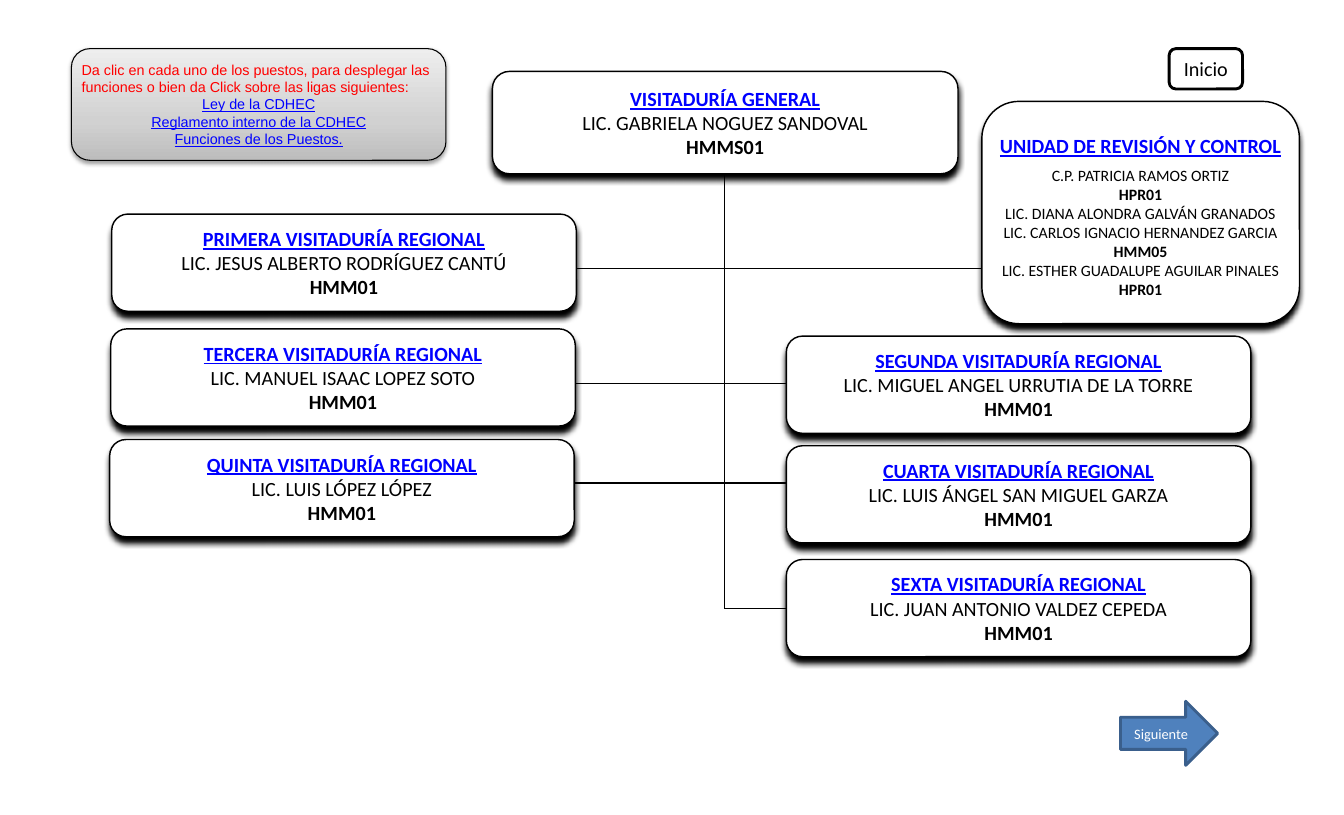
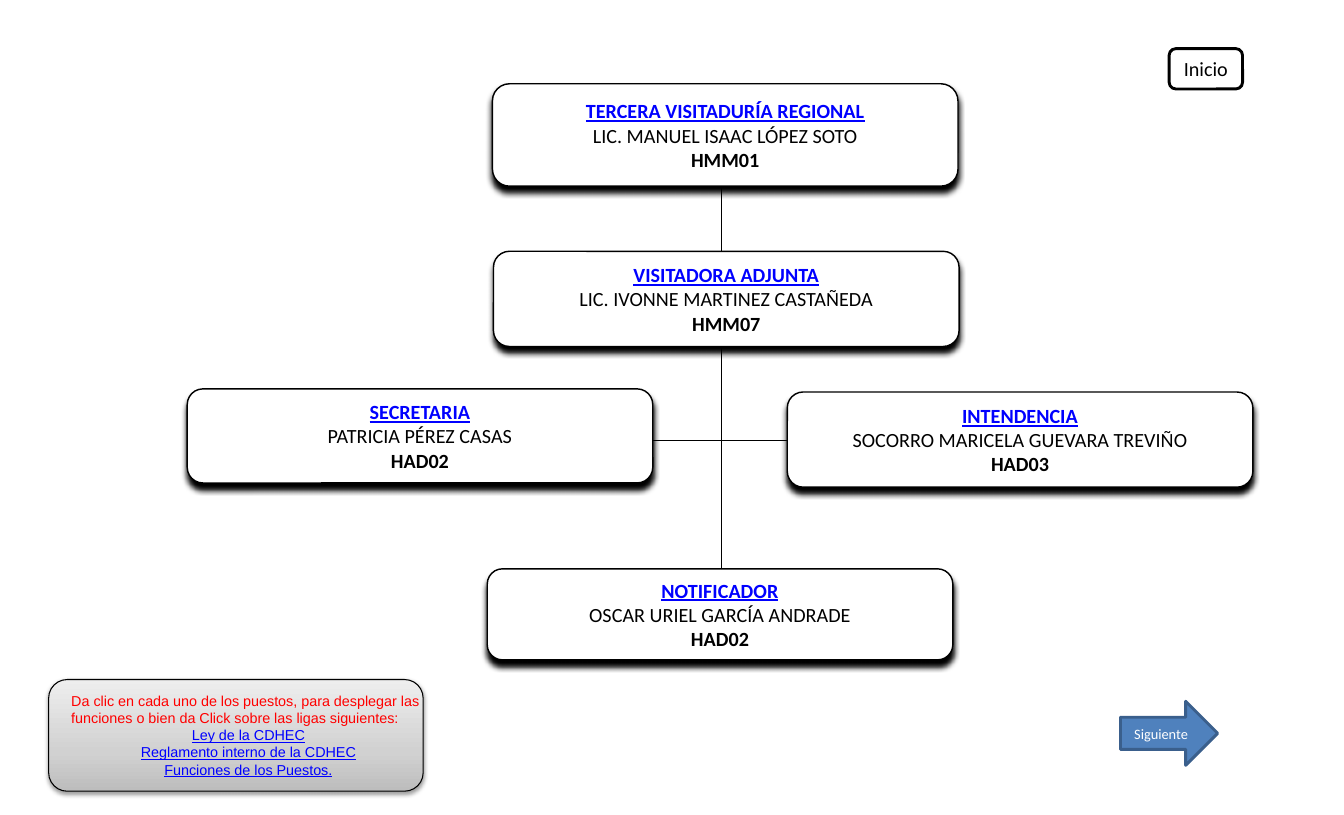
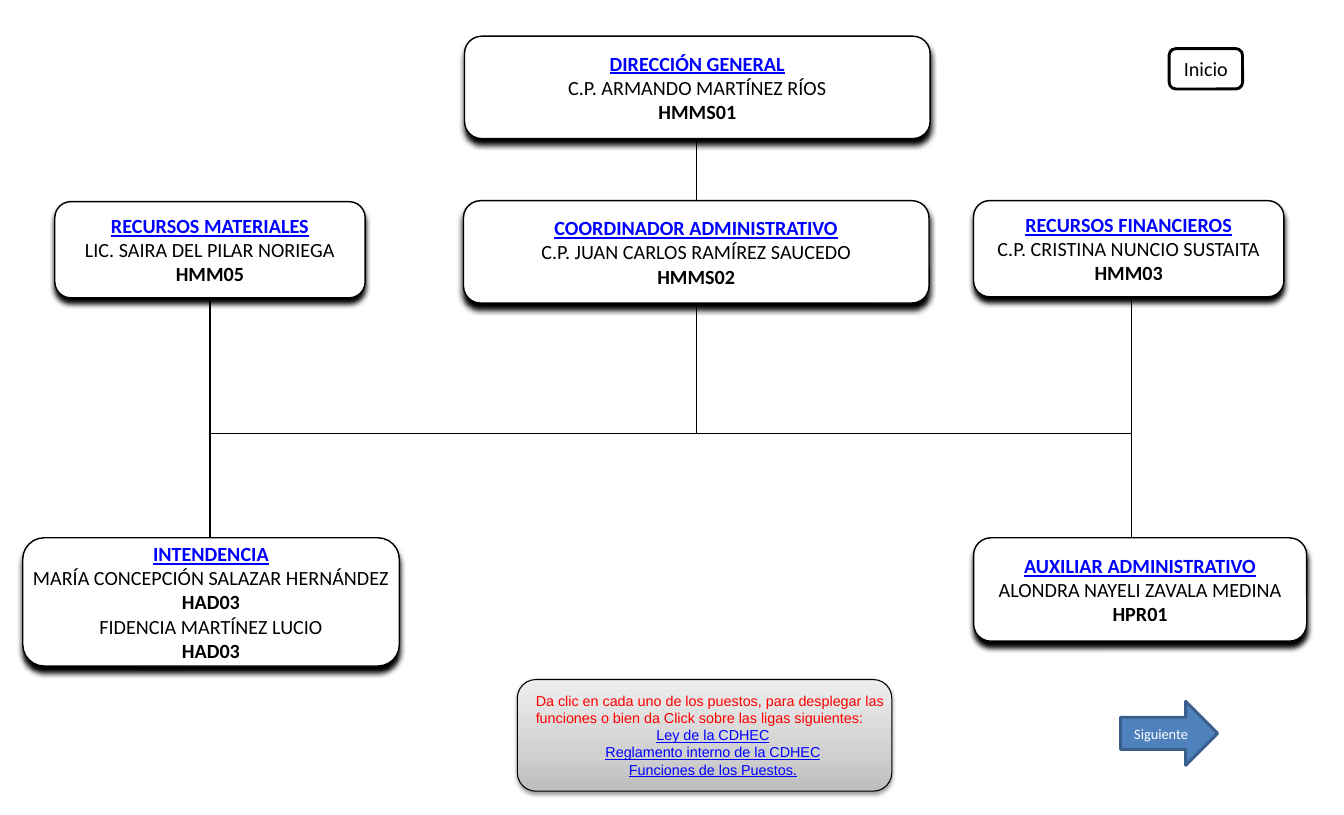
from pptx import Presentation
from pptx.dml.color import RGBColor
from pptx.enum.shapes import MSO_CONNECTOR, MSO_SHAPE as Shape
from pptx.enum.text import MSO_ANCHOR, MSO_AUTO_SIZE, PP_ALIGN
from pptx.oxml.ns import qn
from pptx.util import Pt
from lxml.etree import SubElement

PX = 9144  # EMU per px, 100 px to the inch
WIDTH, HEIGHT = 1299, 788
BLACK, WHITE, LINK, NOTICE = "000000", "FFFFFF", "0000FF", "FF0000"
ARROW, ARROW_EDGE = "4F81BD", "3A5F8C"
PANEL_STOPS = ((0, "BDBDBD"), (35, "D1D1D1"), (100, "EEEEEE"))
INSTRUCTION = ("Da clic en cada uno de los puestos, para desplegar las "
               "funciones o bien da Click sobre las ligas siguientes:")
LINKS = ("Ley de la CDHEC", "Reglamento interno de la CDHEC",
         "Funciones de los Puestos.")


def px(*lengths):
    return [round(length * PX) for length in lengths]


def colour(value):
    return RGBColor.from_string(value)


class OrgChart:
    """Style of the organisation charts and the slide being drawn."""

    def __init__(self):
        self.deck = Presentation()
        self.deck.slide_width, self.deck.slide_height = px(WIDTH, HEIGHT)
        self.shapes = None

    def new_slide(self):
        self.shapes = self.deck.slides.add_slide(self.deck.slide_layouts[6]).shapes

    def box(self, preset, bounds, fill, edge, weight):
        box = self.shapes.add_shape(preset, *px(*bounds))
        box.shadow.inherit = False
        box.line.color.rgb = colour(edge)
        box.line.width = Pt(weight)
        if fill:
            box.fill.solid()
            box.fill.fore_color.rgb = colour(fill)
        box.text_frame.vertical_anchor = MSO_ANCHOR.MIDDLE
        return box

    def shade(self, box, opacity, blur, distance):
        effects = box._element.spPr.find(qn("a:effectLst"))
        shadow = SubElement(effects, qn("a:outerShdw"), blurRad=str(Pt(blur)),
                            dist=str(Pt(distance)), dir="5400000", rotWithShape="0")
        tint = SubElement(shadow, qn("a:srgbClr"), val=BLACK)
        SubElement(tint, qn("a:alpha"), val=str(opacity * 1000))

    def set_lines(self, frame, lines):
        """Each line is text, size, colour, and optionally font, bold, underline, align."""
        for index, (text, size, ink, *style) in enumerate(lines):
            paragraph = frame.paragraphs[0] if index == 0 else frame.add_paragraph()
            family, bold, underline, align = style or ("Calibri", False, False, PP_ALIGN.CENTER)
            paragraph.text = text
            paragraph.alignment = align
            font = paragraph.font
            font.name, font.size, font.bold, font.underline = family, Pt(size), bold, underline
            font.color.rgb = colour(ink)

    def post(self, bounds, position, *details, size=14, gap=0, top=9):
        """A position with its holders; pay codes end in a digit and are bold."""
        card = self.box(Shape.ROUNDED_RECTANGLE, bounds, WHITE, BLACK, 1)
        self.shade(card, 100, 4, 4)
        frame = card.text_frame
        frame.word_wrap = False
        (frame.margin_left, frame.margin_top,
         frame.margin_right, frame.margin_bottom) = px(17, top, 17, 9)
        centred = PP_ALIGN.CENTER
        self.set_lines(frame, [(position, 14, LINK, "Calibri", True, True, centred)] + [
            (detail, size, BLACK, "Calibri", detail[-1].isdigit(), False, centred)
            for detail in details])
        frame.paragraphs[0].space_after = Pt(gap)

    def link_lines(self, *lines):
        for start_x, start_y, end_x, end_y in lines:
            line = self.shapes.add_connector(
                MSO_CONNECTOR.STRAIGHT, *px(start_x, start_y, end_x, end_y))
            line.line.color.rgb = colour(BLACK)
            line.line.width = Pt(0.75)
            SubElement(line._element.spPr, qn("a:effectLst"))

    def help_panel(self, left, top, indent):
        panel = self.box(Shape.ROUNDED_RECTANGLE, (left, top, 362, 108), None, BLACK, 0.75)
        panel.fill.gradient()
        panel.fill.gradient_angle = 90
        stops = panel._element.spPr.find(qn("a:gradFill")).find(qn("a:gsLst"))
        for stop in list(stops):
            stops.remove(stop)
        for place, tint in PANEL_STOPS:
            stop = SubElement(stops, qn("a:gs"), pos=str(place * 1000))
            SubElement(stop, qn("a:srgbClr"), val=tint)
        self.shade(panel, 38, 3.1, 1.6)

        frame = self.shapes.add_textbox(*px(left + indent, top + 7, 362, 94)).text_frame
        frame.word_wrap = True
        frame.auto_size = MSO_AUTO_SIZE.SHAPE_TO_FIT_TEXT
        self.set_lines(frame, [(INSTRUCTION, 10, NOTICE, "Arial", False, False, PP_ALIGN.LEFT)] + [
            (link, 10, LINK, "Arial", False, True, PP_ALIGN.CENTER) for link in LINKS])

    def navigation(self):
        home = self.box(Shape.ROUNDED_RECTANGLE, (1130, 47, 71, 39), WHITE, BLACK, 2)
        self.set_lines(home.text_frame, [("Inicio", 14, BLACK)])
        onward = self.box(Shape.RIGHT_ARROW, (1083, 678, 94, 62), ARROW, ARROW_EDGE, 2)
        self.set_lines(onward.text_frame, [("Siguiente", 10, WHITE)])


# Slide 1
def general_office(chart):
    chart.new_slide()
    chart.link_lines((552, 260, 1103, 260), (512, 371, 926, 371), (552, 467, 831, 467),
                     (700, 169, 700, 588), (700, 588, 815, 588))
    chart.post((476, 69, 450, 99), "VISITADURÍA GENERAL",
               "LIC. GABRIELA NOGUEZ SANDOVAL", "HMMS01")
    regions = (
        (108, 207, "PRIMERA", "LIC. JESUS ALBERTO RODRÍGUEZ CANTÚ"),
        (760, 325, "SEGUNDA", "LIC. MIGUEL ANGEL URRUTIA DE LA TORRE"),
        (107, 318, "TERCERA", "LIC. MANUEL ISAAC LOPEZ SOTO"),
        (760, 431, "CUARTA", "LIC. LUIS ÁNGEL SAN MIGUEL GARZA"),
        (106, 425, "QUINTA", "LIC. LUIS LÓPEZ LÓPEZ"),
        (760, 541, "SEXTA", "LIC. JUAN ANTONIO VALDEZ CEPEDA"),
    )
    for left, top, ordinal, holder in regions:
        chart.post((left, top, 449, 94), f"{ordinal} VISITADURÍA REGIONAL", holder, "HMM01")
    chart.post((949, 98, 307, 215), "UNIDAD DE REVISIÓN Y CONTROL",
               "C.P. PATRICIA RAMOS ORTIZ", "HPR01",
               "LIC. DIANA ALONDRA GALVÁN GRANADOS",
               "LIC. CARLOS IGNACIO HERNANDEZ GARCIA", "HMM05",
               "LIC. ESTHER GUADALUPE AGUILAR PINALES", "HPR01",
               size=11, gap=6, top=16)
    chart.help_panel(69, 47, 0)
    chart.navigation()


# Slide 2
def third_region(chart):
    chart.new_slide()
    chart.link_lines((697, 175, 697, 550), (631, 426, 782, 426))
    chart.post((476, 81, 450, 99), "TERCERA VISITADURÍA REGIONAL",
               "LIC. MANUEL ISAAC LÓPEZ SOTO", "HMM01")
    chart.post((477, 243, 450, 92), "VISITADORA ADJUNTA",
               "LIC. IVONNE MARTINEZ CASTAÑEDA", "HMM07")
    chart.post((181, 376, 450, 91), "SECRETARIA", "PATRICIA PÉREZ CASAS", "HAD02")
    chart.post((761, 379, 450, 92), "INTENDENCIA",
               "SOCORRO MARICELA GUEVARA TREVIÑO", "HAD03")
    chart.post((471, 550, 450, 88), "NOTIFICADOR", "OSCAR URIEL GARCÍA ANDRADE", "HAD02")
    chart.help_panel(47, 657, 12)
    chart.navigation()


# Slide 3
def administration(chart):
    chart.new_slide()
    chart.link_lines((1094, 287, 1094, 525), (203, 419, 1094, 419),
                     (673, 111, 673, 419), (203, 287, 203, 520))
    chart.post((449, 35, 450, 99), "DIRECCIÓN GENERAL",
               "C.P. ARMANDO MARTÍNEZ RÍOS", "HMMS01")
    chart.post((448, 194, 450, 99), "COORDINADOR ADMINISTRATIVO",
               "C.P. JUAN CARLOS RAMÍREZ SAUCEDO", "HMMS02")
    chart.post((53, 195, 300, 93), "RECURSOS MATERIALES",
               "LIC. SAIRA DEL PILAR NORIEGA", "HMM05")
    chart.post((22, 520, 364, 124), "INTENDENCIA",
               "MARÍA CONCEPCIÓN SALAZAR HERNÁNDEZ", "HAD03",
               "FIDENCIA MARTÍNEZ LUCIO", "HAD03")
    chart.post((941, 194, 300, 93), "RECURSOS FINANCIEROS",
               "C.P. CRISTINA NUNCIO SUSTAITA", "HMM03")
    chart.post((941, 520, 322, 100), "AUXILIAR ADMINISTRATIVO",
               "ALONDRA NAYELI ZAVALA MEDINA", "HPR01")
    chart.help_panel(500, 657, 8)
    chart.navigation()


def main():
    chart = OrgChart()
    for build in (general_office, third_region, administration):
        build(chart)
    chart.deck.save("out.pptx")


if __name__ == "__main__":
    main()
